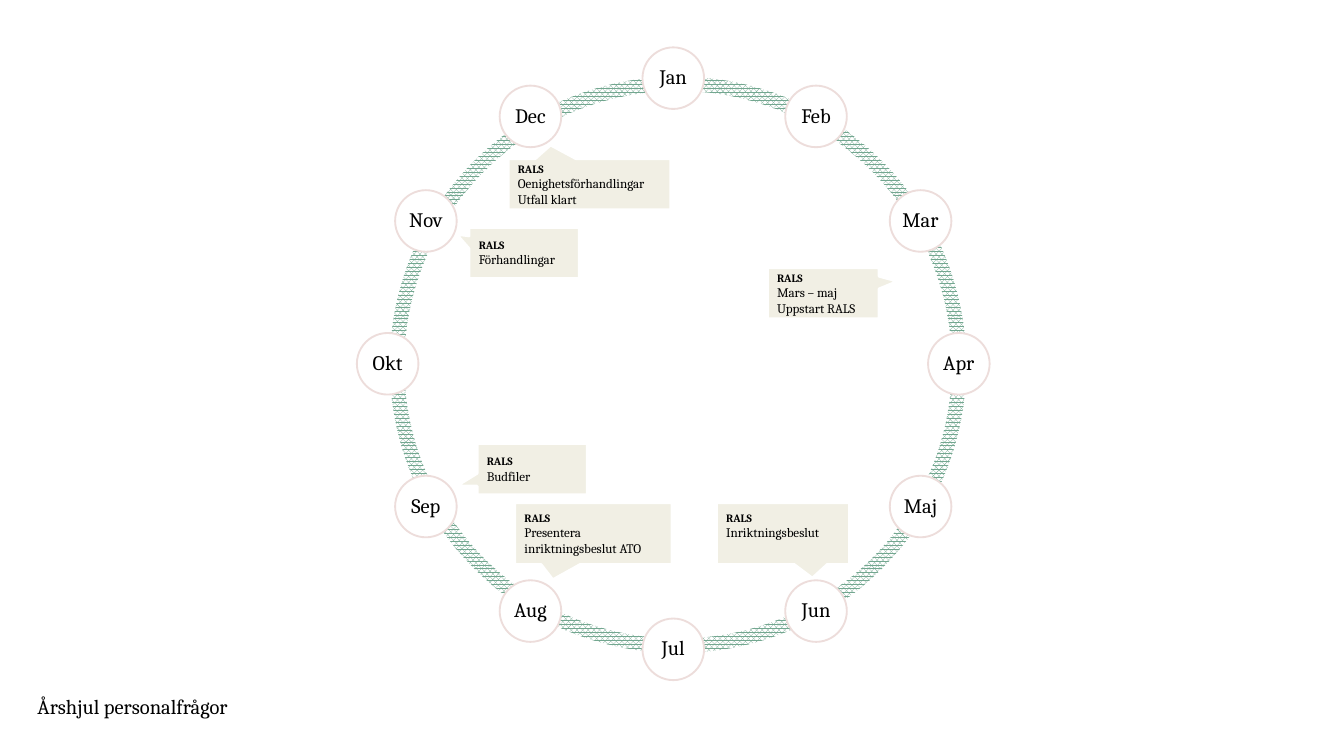
import math

from pptx import Presentation
from pptx.dml.color import RGBColor
from pptx.enum.dml import MSO_PATTERN
from pptx.enum.shapes import MSO_SHAPE
from pptx.enum.text import MSO_ANCHOR, MSO_AUTO_SIZE, PP_ALIGN
from pptx.util import Pt

OVAL, DONUT, CALLOUT = MSO_SHAPE.OVAL, MSO_SHAPE.DONUT, MSO_SHAPE.RECTANGULAR_CALLOUT
DENSE = MSO_PATTERN.PERCENT_80
MIDDLE = MSO_ANCHOR.MIDDLE
LEFT, CENTER = PP_ALIGN.LEFT, PP_ALIGN.CENTER
FIT_SHAPE = MSO_AUTO_SIZE.SHAPE_TO_FIT_TEXT

FONT = "Cambria"
COLORS = {"white": "FFFFFF", "green": "73A790", "pink": "EDDDDB",
          "sand": "F1EFE4", "black": "000000"}

MONTHS = ["Jan", "Feb", "Mar", "Apr", "Maj", "Jun",
          "Jul", "Aug", "Sep", "Okt", "Nov", "Dec"]
MONTH_SIZE = 33
LINE_HEIGHT = 8.2

NOTES = [
    ((411.1, 143.4, 59.8, 27.4), (0.666, -0.234), ["Mars – maj Uppstart RALS"], 0),
    ((383.8, 269.3, 71.3, 33.1), (0.221, 0.722), ["Inriktningsbeslut"], LINE_HEIGHT),
    ((275.8, 269.3, 84.2, 33.1), (-0.258, 0.748), ["Presentera inriktningsbeslut ATO"], 0),
    ((255.6, 237.6, 59, 27.4), (-0.685, 0.329), ["Budfiler"], 0),
    ((251.3, 121.8, 59, 27.4), (-0.614, -0.364), ["Förhandlingar"], 0),
    ((272.2, 85, 87.1, 27.4), (-0.239, -0.767), ["Oenighetsförhandlingar", "Utfall klart"], 0),
]


def color(name):
    return RGBColor.from_string(COLORS[name])


def add_filled(slide, kind, box, fill, line, width):
    shape = slide.shapes.add_shape(kind, *map(Pt, box))
    shape.shadow.inherit = False
    shape.fill.solid()
    shape.fill.fore_color.rgb = color(fill)
    shape.line.color.rgb = color(line)
    shape.line.width = Pt(width)
    return shape


def set_margins(frame, left, top, right, bottom):
    frame.margin_left, frame.margin_top = Pt(left), Pt(top)
    frame.margin_right, frame.margin_bottom = Pt(right), Pt(bottom)


def write(paragraph, text, size, bold=False, align=LEFT):
    paragraph.text = text
    paragraph.alignment = align
    paragraph.font.name = FONT
    paragraph.font.size = Pt(size)
    paragraph.font.bold = bold
    paragraph.font.color.rgb = color("black")


def add_ring(slide, box):
    ring = slide.shapes.add_shape(DONUT, *map(Pt, box))
    ring.shadow.inherit = False
    ring.adjustments[0] = 0.025
    ring.fill.patterned()
    ring.fill.pattern = DENSE
    ring.fill.fore_color.rgb = color("green")
    ring.fill.back_color.rgb = color("white")
    ring.line.fill.background()


def add_months(slide, box):
    left, top, width, height = box
    radius = (width - MONTH_SIZE) / 2
    for index, month in enumerate(MONTHS):
        angle = 2 * math.pi * index / len(MONTHS)
        x = left + radius * (1 + math.sin(angle))
        y = top + radius * (1 - math.cos(angle))
        circle = add_filled(slide, OVAL, (x, y, MONTH_SIZE, MONTH_SIZE), "white", "pink", 1)
        frame = circle.text_frame
        frame.vertical_anchor = MIDDLE
        frame.word_wrap = False
        set_margins(frame, 1.4, 1.4, 1.4, 1.4)
        label = frame.paragraphs[0]
        write(label, month, 11, align=CENTER)
        label.line_spacing = 0.9


def add_note(slide, box, pointer, lines, space_below):
    note = add_filled(slide, CALLOUT, box, "sand", "white", 1.5)
    note.adjustments[0], note.adjustments[1] = pointer
    frame = note.text_frame
    frame.word_wrap = True
    frame.vertical_anchor = MIDDLE
    set_margins(frame, 5.2, 2.6, 5.2, 2.6 + space_below)
    write(frame.paragraphs[0], "RALS", 6, bold=True)
    for line in lines:
        write(frame.add_paragraph(), line, 7)


def add_title(slide, box):
    frame = slide.shapes.add_textbox(*map(Pt, box)).text_frame
    frame.word_wrap = True
    frame.auto_size = FIT_SHAPE
    write(frame.paragraphs[0], "Årshjul personalfrågor", 11)


def main():
    deck = Presentation()
    deck.slide_width, deck.slide_height = Pt(720), Pt(405)
    slide = deck.slides.add_slide(deck.slide_layouts[6])
    add_ring(slide, (208.8, 41, 308.9, 308.9))
    add_months(slide, (191.2, 25.4, 339, 339))
    for note in NOTES:
        add_note(slide, *note)
    add_title(slide, (13, 368, 211, 21))
    deck.save("out.pptx")


if __name__ == "__main__":
    main()
